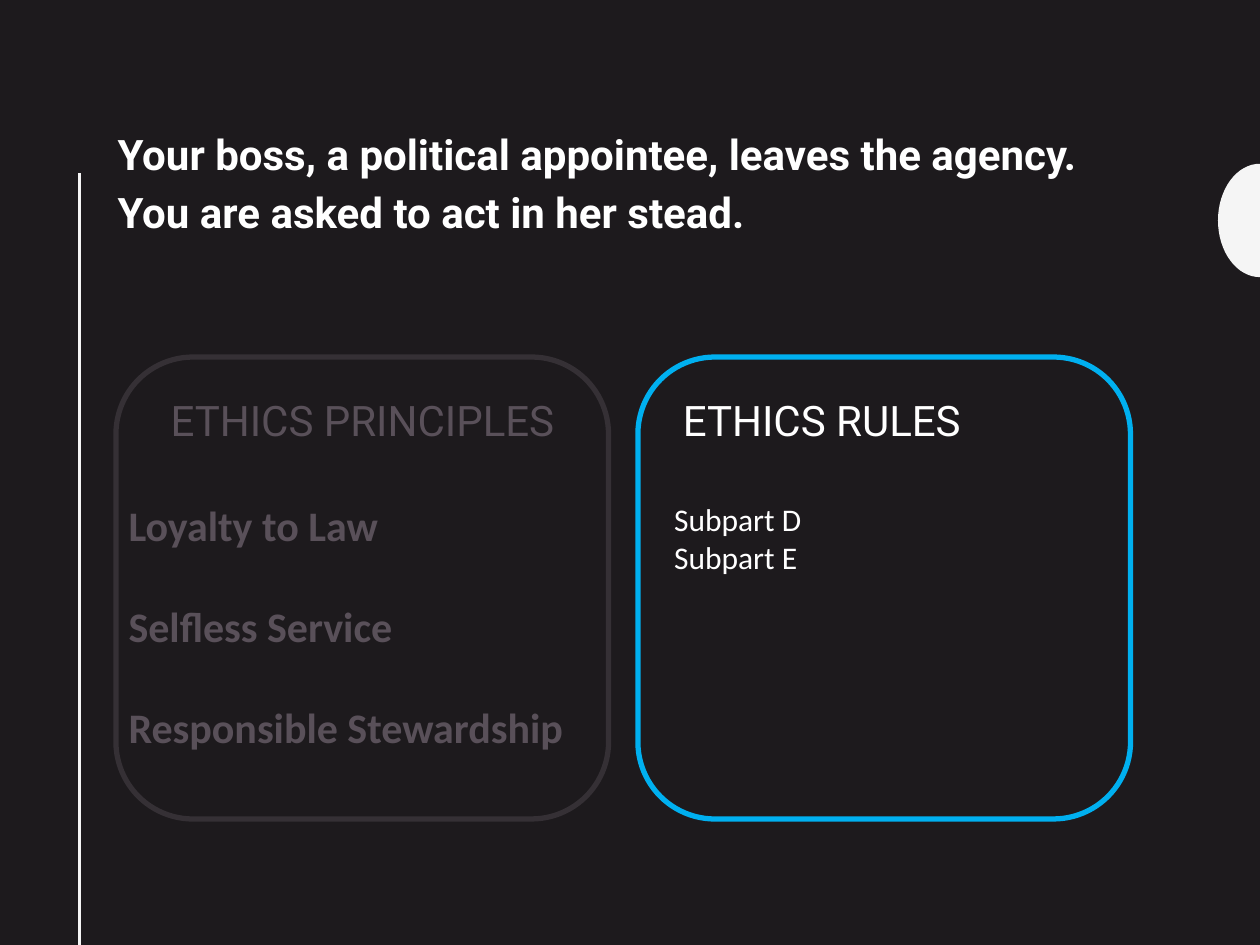
import math

import pptx
import pptx.dml.color
import pptx.enum.shapes
import pptx.enum.text
import pptx.oxml.xmlchemy
import pptx.util

Pt = pptx.util.Pt
WIDTH, HEIGHT = 720, 540
DARK, PALE, WHITE = "1D1A1D", "F5F5F5", "FFFFFF"


def rgb(value):
    return pptx.dml.color.RGBColor.from_string(value)


def write(shape, text, font, size, color, bold=False, gap=0, spacing=1.0):
    """Fill a placeholder with plain, left-aligned, unbulleted paragraphs."""
    tf = shape.text_frame
    tf.text = text
    tf.word_wrap = True
    tf.auto_size = pptx.enum.text.MSO_AUTO_SIZE.NONE
    tf.vertical_anchor = pptx.enum.text.MSO_ANCHOR.TOP
    for i, p in enumerate(tf.paragraphs):
        p.alignment = pptx.enum.text.PP_ALIGN.LEFT
        p.line_spacing = spacing
        p.space_before = Pt(gap if i else 0)
        p.space_after = Pt(0)
        pPr = p._p.get_or_add_pPr()
        pPr.set("marL", "0")
        pPr.set("indent", "0")
        pPr.append(pptx.oxml.xmlchemy.OxmlElement("a:buNone"))
        for r in p.runs:
            r.font.name, r.font.size, r.font.bold = font, Pt(size), bold
            r.font.color.rgb = rgb(color)


def place(shape, left, top, width, height):
    shape.left, shape.top = Pt(left), Pt(top)
    shape.width, shape.height = Pt(width), Pt(height)


def add_decoration(s):
    # Half ellipse on the right edge
    cx, cy, rx, ry = WIDTH, 126, 24, 32.4
    steps = 32
    angles = [math.pi * (0.5 + i / steps) for i in range(steps + 1)]
    points = [(Pt(cx + rx * math.cos(a)), Pt(cy + ry * math.sin(a))) for a in angles]
    builder = s.shapes.build_freeform(*points[0])
    builder.add_line_segments(points[1:], close=True)
    half = builder.convert_to_shape()
    half.shadow.inherit = False
    half.fill.solid()
    half.fill.fore_color.rgb = rgb(PALE)
    half.line.fill.background()

    # Vertical rule on the left
    rule = s.shapes.add_connector(pptx.enum.shapes.MSO_CONNECTOR.STRAIGHT,
                                  Pt(45.5), Pt(99), Pt(45.5), Pt(HEIGHT))
    rule.line.color.rgb = rgb(PALE)
    rule.line.width = Pt(2)
    rule._element.spPr.append(pptx.oxml.xmlchemy.OxmlElement("a:effectLst"))


def add_panel(s, box, heading, body, outline, heading_inset, body_inset, body_width,
              body_height, title, lines, color, **body_style):
    left, top, width, height = box
    # Rounded frame
    frame = s.shapes.add_shape(pptx.enum.shapes.MSO_SHAPE.ROUNDED_RECTANGLE,
                               Pt(left), Pt(top), Pt(width), Pt(height))
    frame.shadow.inherit = False
    frame.fill.background()
    frame.line.color.rgb = rgb(outline)
    frame.line.width = Pt(3)

    # Heading and list
    place(heading, left + heading_inset, top + 18, 260, 36)
    write(heading, title, "Roboto", 24, color)
    place(body, left + body_inset, top + 78, body_width, body_height)
    write(body, "\n".join(lines), "Calibri", color=color, **body_style)


def main():
    prs = pptx.Presentation()
    prs.slide_width, prs.slide_height = Pt(WIDTH), Pt(HEIGHT)
    s = prs.slides.add_slide(prs.slide_layouts.get_by_name("Comparison"))
    s.background.fill.solid()
    s.background.fill.fore_color.rgb = rgb(DARK)
    holders = s.placeholders

    add_decoration(s)

    # Title
    place(s.shapes.title, 60, 66, 612, 130)
    write(s.shapes.title,
          "Your boss, a political appointee, leaves the agency.\v"
          "You are asked to act in her stead.",
          "Roboto", 24, WHITE, bold=True, spacing=1.14)

    # Two equal panels, the left one dimmed
    left, width, gap = 66.25, 281.5, 16.75
    add_panel(s, (left, 204, width, 264), holders[1], holders[2], "353035",
              24, 0, 276, 153, "ETHICS PRINCIPLES",
              ["Loyalty to Law", "Selfless Service", "Responsible Stewardship"],
              "595059", size=24, bold=True, gap=28.8)
    add_panel(s, (left + width + gap, 204, width, 264), holders[3], holders[4], "00B0F0",
              18.5, 13.5, 342, 94, "ETHICS RULES",
              ["Subpart D", "Subpart E"], WHITE, size=18)

    prs.save("out.pptx")


if __name__ == "__main__":
    main()
